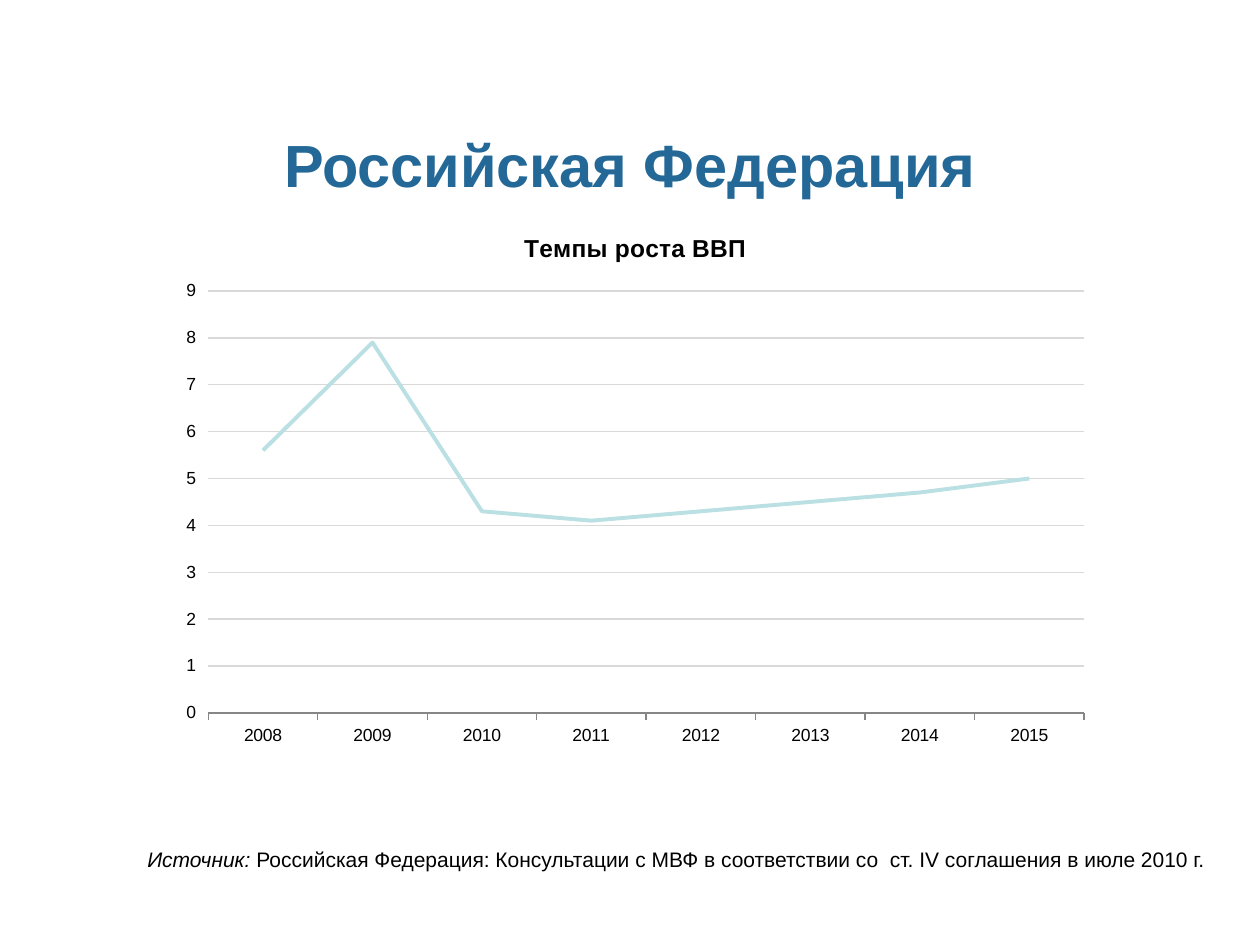
import pptx
import pptx.chart.data
import pptx.dml.color
import pptx.enum.chart
import pptx.enum.text
import pptx.util

Cm = pptx.util.Cm
Pt = pptx.util.Pt
RGB = pptx.dml.color.RGBColor
BLUE = RGB(0x23, 0x68, 0x97)
BLACK = RGB(0, 0, 0)
AQUA = RGB(0xBB, 0xE0, 0xE3)
PALE = RGB(0xD9, 0xD9, 0xD9)
GREY = RGB(0x86, 0x86, 0x86)


def style(font, color, form):
    font.name = "Arial"
    font.color.rgb = color
    for key, value in form.items():
        setattr(font, key, value)


def write(area, align, anchor, parts):
    frame = slide.shapes.add_textbox(*area).text_frame
    frame.word_wrap = True
    frame.vertical_anchor = anchor
    para = frame.paragraphs[0]
    para.alignment = align
    for text, color, form in parts:
        run = para.add_run()
        run.text = text
        style(run.font, color, form)


deck = pptx.Presentation()
deck.slide_width = Cm(25.4)
deck.slide_height = Cm(19.05)
slide = deck.slides.add_slide(deck.slide_layouts[6])

Align = pptx.enum.text.PP_ALIGN
Anchor = pptx.enum.text.MSO_ANCHOR
write((Cm(0), Cm(2.11), Cm(25.4), Cm(2.39)), Align.CENTER, Anchor.MIDDLE,
      [("Российская Федерация", BLUE, {"size": Pt(34), "bold": True})])

data = pptx.chart.data.CategoryChartData()
data.categories = [str(year) for year in range(2008, 2016)]
data.add_series("Темпы роста ВВП", [5.6, 7.9, 4.3, 4.1, 4.3, 4.5, 4.7, 5])
chart = slide.shapes.add_chart(
    pptx.enum.chart.XL_CHART_TYPE.LINE,
    Cm(3.38), Cm(4.24), Cm(18.85), Cm(11), data).chart
style(chart.font, BLACK, {"size": Pt(10)})
chart.has_legend = False
chart.has_title = True
title = chart.chart_title
title.include_in_layout = False
title.text_frame.text = "Темпы роста ВВП"
style(title.text_frame.paragraphs[0].runs[0].font, BLACK,
      {"size": Pt(14), "bold": True})

plot = chart.plots[0]
plot.vary_by_categories = False
line = plot.series[0]
line.smooth = False
line.marker.style = pptx.enum.chart.XL_MARKER_STYLE.NONE
line.format.line.color.rgb = AQUA
line.format.line.width = Pt(2.25)

Tick = pptx.enum.chart.XL_TICK_MARK
years = chart.category_axis
rates = chart.value_axis
for axis in (years, rates):
    axis.major_tick_mark = Tick.OUTSIDE
    axis.minor_tick_mark = Tick.NONE
years.format.line.color.rgb = GREY
years.format.line.width = Pt(0.75)
for key, value in {"minimum_scale": 0, "maximum_scale": 9,
                   "major_unit": 1, "has_major_gridlines": True}.items():
    setattr(rates, key, value)
rates.format.line.fill.background()
grid = rates.major_gridlines.format.line
grid.color.rgb = PALE
grid.width = Pt(0.75)

write((Cm(2.72), Cm(16.94), Cm(21.97), Cm(0.76)), Align.LEFT, Anchor.TOP, [
    ("Источник: ", BLACK, {"size": Pt(12), "italic": True}),
    ("Российская Федерация: Консультации с МВФ в соответствии со  ст. IV "
     "соглашения в июле 2010 г.", BLACK, {"size": Pt(12)})])

deck.save("out.pptx")
